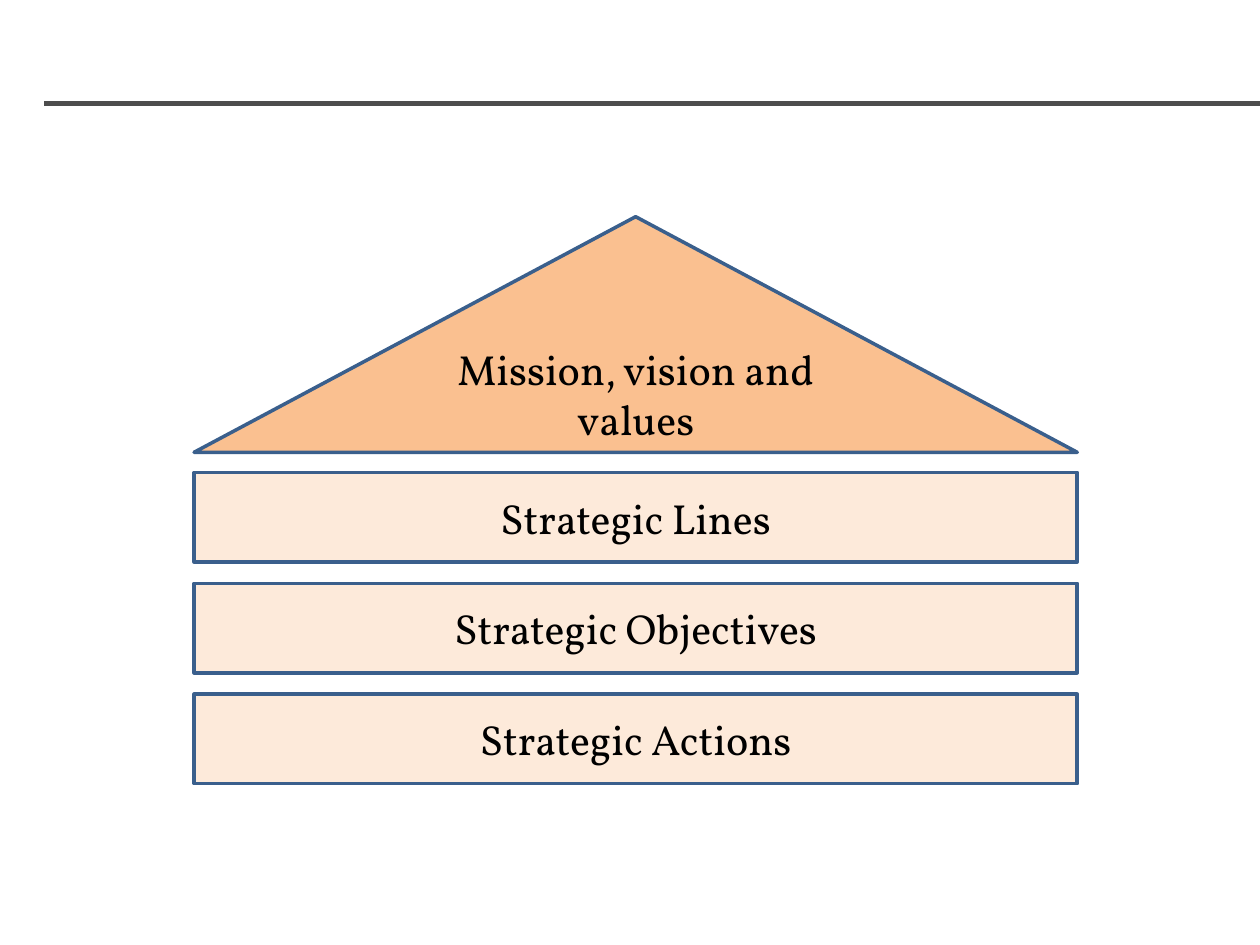
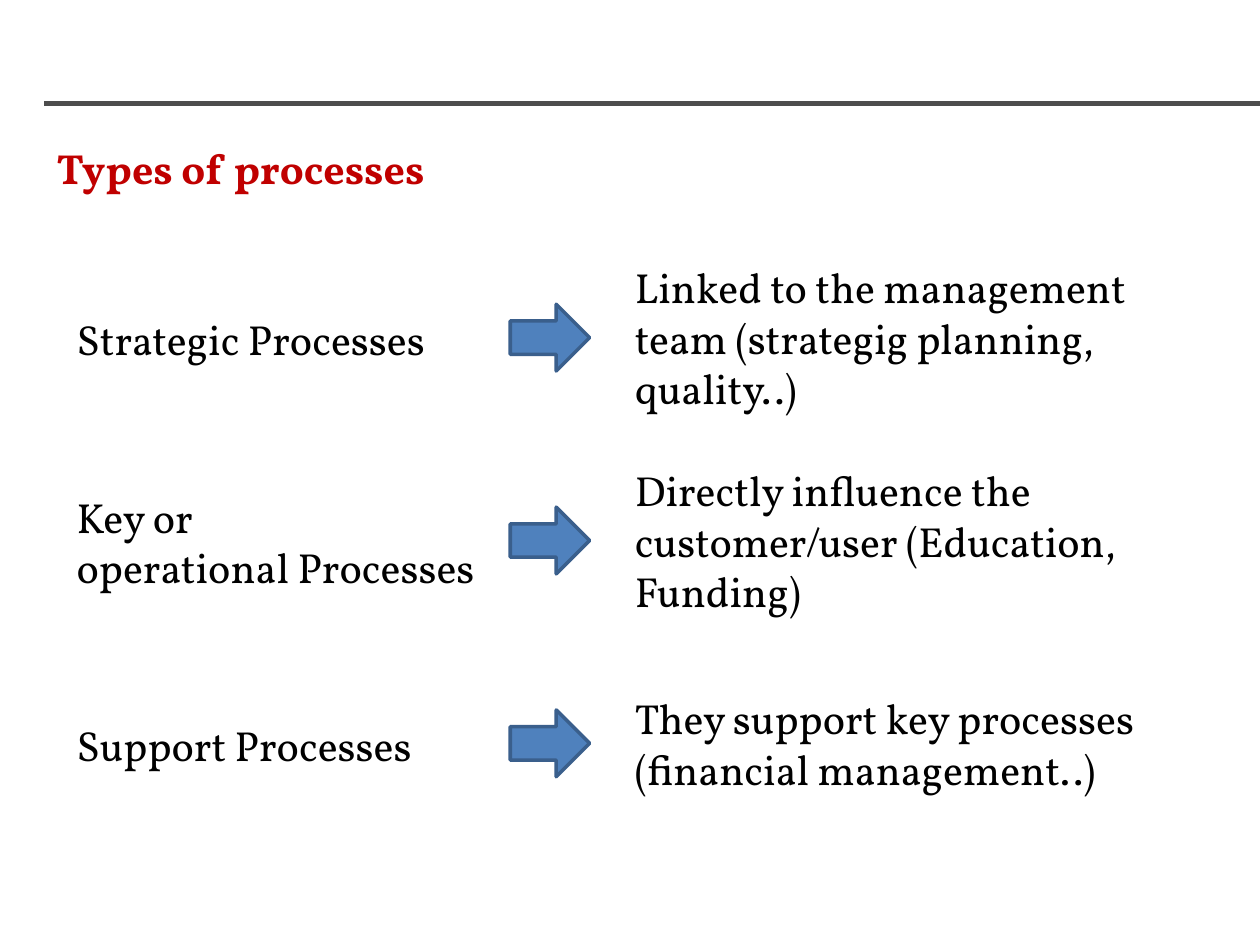
from dataclasses import dataclass

from lxml import etree
from pptx import Presentation
from pptx.dml.color import RGBColor
from pptx.enum.shapes import MSO_CONNECTOR, MSO_SHAPE
from pptx.enum.text import MSO_ANCHOR, MSO_AUTO_SIZE, PP_ALIGN
from pptx.oxml.ns import qn
from pptx.util import Inches, Pt

ROOF = MSO_SHAPE.FLOWCHART_EXTRACT
BAR = MSO_SHAPE.RECTANGLE
ARROW = MSO_SHAPE.RIGHT_ARROW
STRAIGHT = MSO_CONNECTOR.STRAIGHT
CENTER = PP_ALIGN.CENTER
LEFT = PP_ALIGN.LEFT
MIDDLE = MSO_ANCHOR.MIDDLE
GROW = MSO_AUTO_SIZE.SHAPE_TO_FIT_TEXT


@dataclass(frozen=True)
class Theme:
    font: str = "Vollkorn"
    text_size: int = 24
    outline_width: int = 2
    rule_width: int = 3
    text: str = "000000"
    heading: str = "C00000"
    rule: str = "4D4D4D"
    outline: str = "3A5F8C"
    roof: str = "FAC090"
    bar: str = "FDEADA"
    arrow: str = "4F81BD"


class Deck:
    def __init__(self, theme):
        self.theme = theme
        self.presentation = Presentation()
        self.presentation.slide_width = Inches(10)
        self.presentation.slide_height = Inches(7.5)
        self.slide = None

    def new_slide(self):
        blank = self.presentation.slide_layouts[6]
        self.slide = self.presentation.slides.add_slide(blank)
        self.rule(0.35, 10, 0.82)

    def rule(self, left, right, top):
        line = self.slide.shapes.add_connector(
            STRAIGHT, Inches(left), Inches(top), Inches(right), Inches(top))
        line.line.color.rgb = RGBColor.from_string(self.theme.rule)
        line.line.width = Pt(self.theme.rule_width)
        etree.SubElement(line._element.spPr, qn("a:effectLst"))

    def set_text(self, frame, text, alignment, color, bold=False):
        frame.word_wrap = True
        frame.text = text
        font_format = {"name": self.theme.font, "size": Pt(self.theme.text_size), "bold": bold}
        for paragraph in frame.paragraphs:
            paragraph.alignment = alignment
            for attribute, value in font_format.items():
                setattr(paragraph.font, attribute, value)
            paragraph.font.color.rgb = RGBColor.from_string(color)

    def block(self, kind, box, fill, text=""):
        shape = self.slide.shapes.add_shape(kind, *map(Inches, box))
        shape.shadow.inherit = False
        shape.fill.solid()
        shape.fill.fore_color.rgb = RGBColor.from_string(fill)
        shape.line.color.rgb = RGBColor.from_string(self.theme.outline)
        shape.line.width = Pt(self.theme.outline_width)
        if text:
            shape.text_frame.vertical_anchor = MIDDLE
            self.set_text(shape.text_frame, text, CENTER, self.theme.text)

    def text_box(self, box, text, color=None, bold=False):
        shape = self.slide.shapes.add_textbox(*map(Inches, box))
        self.set_text(shape.text_frame, text, LEFT, color or self.theme.text, bold)
        shape.text_frame.auto_size = GROW

    def centered_text(self, left, middle, width, line_count, text):
        height = 0.1 + 0.4 * line_count
        self.text_box((left, middle - height / 2, width, height), text)


def build_strategy_house(deck):
    deck.new_slide()
    left, width = 1.54, 7.01
    deck.block(ROOF, (left, 1.72, width, 1.87), deck.theme.roof, "Mission, vision and values")
    levels = ["Strategic Lines", "Strategic Objectives", "Strategic Actions"]
    for index, level in enumerate(levels):
        deck.block(BAR, (left, 3.75 + 0.88 * index, width, 0.71), deck.theme.bar, level)


def build_process_types(deck):
    deck.new_slide()
    deck.text_box((0.35, 1.08, 9.18, 0.51), "Types of processes", deck.theme.heading, True)
    processes = [
        ("Strategic Processes", 1,
         "Linked to the management team (strategig planning, quality..)", 3),
        ("Key or\noperational Processes", 2,
         "Directly influence the customer/user (Education, Funding)", 3),
        ("Support Processes", 1,
         "They support key processes (financial management..)", 2),
    ]
    arrow_height = 0.53
    for index, (name, name_lines, role, role_lines) in enumerate(processes):
        middle = 2.68 + 1.61 * index
        deck.centered_text(0.51, middle + 0.01, 3.39, name_lines, name)
        deck.block(ARROW, (4.05, middle - arrow_height / 2, 0.63, arrow_height), deck.theme.arrow)
        deck.centered_text(4.94, middle, 4.59, role_lines, role)


def main():
    deck = Deck(Theme())
    build_strategy_house(deck)
    build_process_types(deck)
    deck.presentation.save("out.pptx")


if __name__ == "__main__":
    main()
